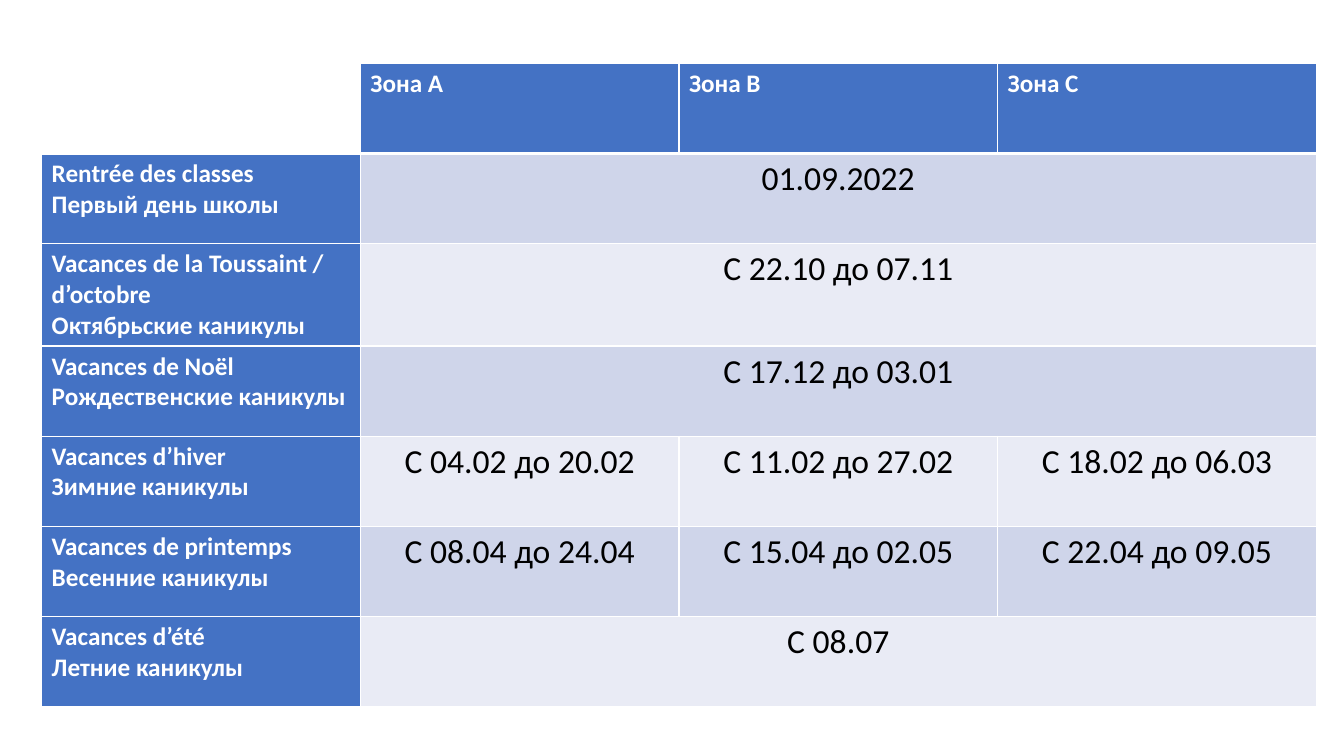
import pptx
import pptx.util
import pptx.dml.color
import pptx.enum.text
import pptx.oxml
import pptx.oxml.ns

Cm = pptx.util.Cm
Pt = pptx.util.Pt
ALIGN = pptx.enum.text.PP_ALIGN

COLORS = {
    "head": "4472C4",
    "dark": "CFD5EA",
    "light": "E9EBF5",
    "white": "FFFFFF",
    "black": "000000",
}
ZONES = ["Зона А", "Зона В", "Зона С"]
# Each row: name lines, then one date for all zones or one date per zone
TERMS = [
    ("Rentrée des classes\nПервый день школы", ["01.09.2022"]),
    ("Vacances de la Toussaint / d’octobre\nОктябрьские каникулы",
     ["С 22.10 до 07.11"]),
    ("Vacances de Noël\nРождественские каникулы", ["С 17.12 до 03.01"]),
    ("Vacances d’hiver\nЗимние каникулы",
     ["С 04.02 до 20.02", "С 11.02 до 27.02", "С 18.02 до 06.03"]),
    ("Vacances de printemps\nВесенние каникулы",
     ["С 08.04 до 24.04", "С 15.04 до 02.05", "С 22.04 до 09.05"]),
    ("Vacances d’été\nЛетние каникулы", ["С 08.07"]),
]
LEFT, TOP = Cm(1.05), Cm(1.6)
WIDTH, HEIGHT = Cm(8.03), Cm(2.27)


def color(name):
    return pptx.dml.color.RGBColor.from_string(COLORS[name])


def write(frame, text, size=18, ink="white", bold=True, align=ALIGN.LEFT):
    frame.text = text
    for para in frame.paragraphs:
        para.alignment = align
        for run in para.runs:
            font = run.font
            font.name = "Calibri"
            font.size = Pt(size)
            font.bold = bold
            font.color.rgb = color(ink)


def paint(cell, name):
    cell.fill.solid()
    cell.fill.fore_color.rgb = color(name)


def edge(cell, base=1):
    """Draw white borders; base is the bottom width in points."""
    props = cell._tc.get_or_add_tcPr()
    sides = {"lnL": 1, "lnR": 1, "lnT": 1, "lnB": base}
    for spot, (tag, width) in enumerate(sides.items()):
        line = pptx.oxml.parse_xml(
            f'<a:{tag} {pptx.oxml.ns.nsdecls("a")} w="{Pt(width)}">'
            f'<a:solidFill><a:srgbClr val="{COLORS["white"]}"/></a:solidFill>'
            f'</a:{tag}>')
        props.insert(spot, line)


def title(cell, text):
    write(cell.text_frame, text)
    paint(cell, "head")


def date(cell, text, shade):
    write(cell.text_frame, text, size=24, ink="black", bold=False,
          align=ALIGN.CENTER)
    paint(cell, shade)


def grid(slide):
    rows, cols = len(TERMS) + 1, len(ZONES) + 1
    table = slide.shapes.add_table(
        rows, cols, LEFT, TOP, WIDTH * cols, HEIGHT * rows).table
    table.cell(0, 0).fill.background()
    for col, zone in enumerate(ZONES, 1):
        title(table.cell(0, col), zone)
    for row, (name, dates) in enumerate(TERMS, 1):
        title(table.cell(row, 0), name)
        shade = "dark" if row % 2 else "light"
        if len(dates) == 1:
            table.cell(row, 1).merge(table.cell(row, cols - 1))
        for col, text in enumerate(dates, 1):
            date(table.cell(row, col), text, shade)
    for row in range(rows):
        for col in range(cols):
            edge(table.cell(row, col), base=1 if row else 3)


def main():
    deck = pptx.Presentation()
    deck.slide_width, deck.slide_height = Cm(33.87), Cm(19.05)
    grid(deck.slides.add_slide(deck.slide_layouts[6]))
    deck.save("out.pptx")


if __name__ == "__main__":
    main()
